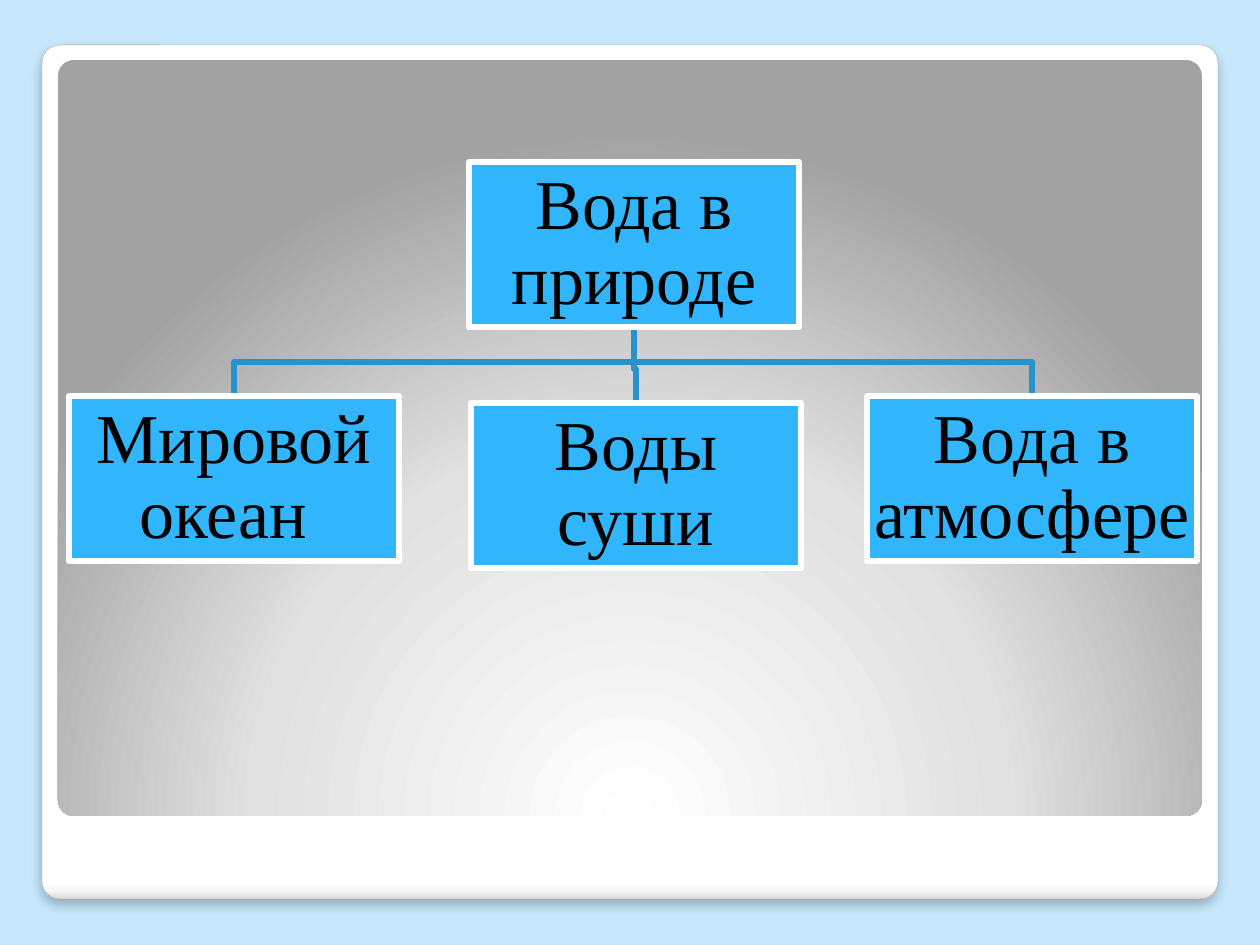
from dataclasses import dataclass

from pptx import Presentation
from pptx.dml.color import RGBColor
from pptx.enum.shapes import MSO_SHAPE
from pptx.enum.text import MSO_ANCHOR, PP_ALIGN
from pptx.oxml import parse_xml
from pptx.oxml.ns import nsdecls, qn
from pptx.util import Pt

EMU_PER_PX = 914400 / 126


@dataclass(frozen=True)
class Theme:
    background: str = "C6E7FC"
    card_stops: tuple = ((0, "FFFFFF"), (98, "FFFFFF"), (99, "F7F7F7"), (100, "DADADA"))
    panel_stops: tuple = ((0, "FFFFFF"), (55, "E1E1E1"), (100, "A2A2A2"))
    card_line: str = "A4A4A4"
    box: str = "31B6FD"
    box_line: str = "FFFFFF"
    link: str = "2792CB"
    text: str = "000000"
    font: str = "Times New Roman"
    text_size: int = 40
    line_width: float = 3.35
    card_line_width: float = 0.16


THEME = Theme()
DOWNWARD = '<a:lin ang="5400000" scaled="0"/>'
FROM_BOTTOM = ('<a:path path="circle"><a:fillToRect l="50000" t="175000" '
               'r="50000" b="-75000"/></a:path>')
SHADOW = (f'<a:outerShdw {nsdecls("a")} blurRad="76200" dist="50800" dir="5400000" '
          'rotWithShape="0"><a:srgbClr val="000000"><a:alpha val="25000"/>'
          '</a:srgbClr></a:outerShdw>')

BOX_WIDTH, BOX_HEIGHT = 330, 165
BEND_HEIGHT = 34
ROOT = ("Вода в природе", 469, 162)
BRANCHES = (
    ("Вода в атмосфере", 867, 396),
    ("Воды суши", 471, 403),
    ("Мировой океан\t", 69, 396),
)


def px(value):
    return round(value * EMU_PER_PX)


def color(value):
    return RGBColor.from_string(value)


def style_line(shape, line_color, width):
    shape.line.color.rgb = color(line_color)
    shape.line.width = Pt(width)


def add_shape(slide, kind, left, top, width, height):
    shape = slide.shapes.add_shape(kind, px(left), px(top), px(width), px(height))
    shape.shadow.inherit = False
    return shape


def add_gradient_panel(slide, bounds, stops, direction):
    shape = add_shape(slide, MSO_SHAPE.ROUNDED_RECTANGLE, *bounds)
    shape.adjustments[0] = 0.021
    shape.line.fill.background()
    shape.fill.gradient()
    properties = shape._element.spPr
    stop_list = "".join(
        f'<a:gs pos="{position * 1000}"><a:srgbClr val="{value}"/></a:gs>'
        for position, value in stops)
    gradient = parse_xml(f'<a:gradFill {nsdecls("a")} rotWithShape="1">'
                         f'<a:gsLst>{stop_list}</a:gsLst>{direction}</a:gradFill>')
    properties.replace(properties.find(qn("a:gradFill")), gradient)
    return shape


def add_frame(slide):
    card = add_gradient_panel(slide, (42, 45, 1176, 854), THEME.card_stops, DOWNWARD)
    style_line(card, THEME.card_line, THEME.card_line_width)
    card._element.spPr.find(qn("a:effectLst")).append(parse_xml(SHADOW))
    add_gradient_panel(slide, (58, 60, 1144, 756), THEME.panel_stops, FROM_BOTTOM)


def add_link(slide, parent, child):
    parent_left, parent_top = parent[1:]
    child_left, child_top = child[1:]
    start_x, start_y = parent_left + BOX_WIDTH / 2, parent_top + BOX_HEIGHT
    end_x, bend_y = child_left + BOX_WIDTH / 2, child_top - BEND_HEIGHT
    builder = slide.shapes.build_freeform(start_x, start_y, scale=EMU_PER_PX)
    builder.add_line_segments(
        [(start_x, bend_y), (end_x, bend_y), (end_x, child_top)], close=False)
    link = builder.convert_to_shape()
    link.shadow.inherit = False
    link.fill.background()
    style_line(link, THEME.link, THEME.line_width)
    link.line._ln.append(parse_xml(f'<a:round {nsdecls("a")}/>'))


def add_box(slide, label, left, top):
    box = add_shape(slide, MSO_SHAPE.RECTANGLE, left, top, BOX_WIDTH, BOX_HEIGHT)
    box.fill.solid()
    box.fill.fore_color.rgb = color(THEME.box)
    style_line(box, THEME.box_line, THEME.line_width)
    frame = box.text_frame
    frame.word_wrap = True
    frame.vertical_anchor = MSO_ANCHOR.MIDDLE
    frame.margin_left = frame.margin_right = px(4)
    frame.margin_top = frame.margin_bottom = px(4)
    paragraph = frame.paragraphs[0]
    paragraph.alignment = PP_ALIGN.CENTER
    paragraph.line_spacing = 0.9
    run = paragraph.add_run()
    run.text = label
    run.font.name = THEME.font
    run.font.size = Pt(THEME.text_size)
    run.font.color.rgb = color(THEME.text)


def main():
    presentation = Presentation()
    presentation.slide_width, presentation.slide_height = px(1260), px(945)
    slide = presentation.slides.add_slide(presentation.slide_layouts[6])
    slide.background.fill.solid()
    slide.background.fill.fore_color.rgb = color(THEME.background)
    add_frame(slide)
    for branch in BRANCHES:
        add_link(slide, ROOT, branch)
    for box in (ROOT, *reversed(BRANCHES)):
        add_box(slide, *box)
    presentation.save("out.pptx")


if __name__ == "__main__":
    main()
